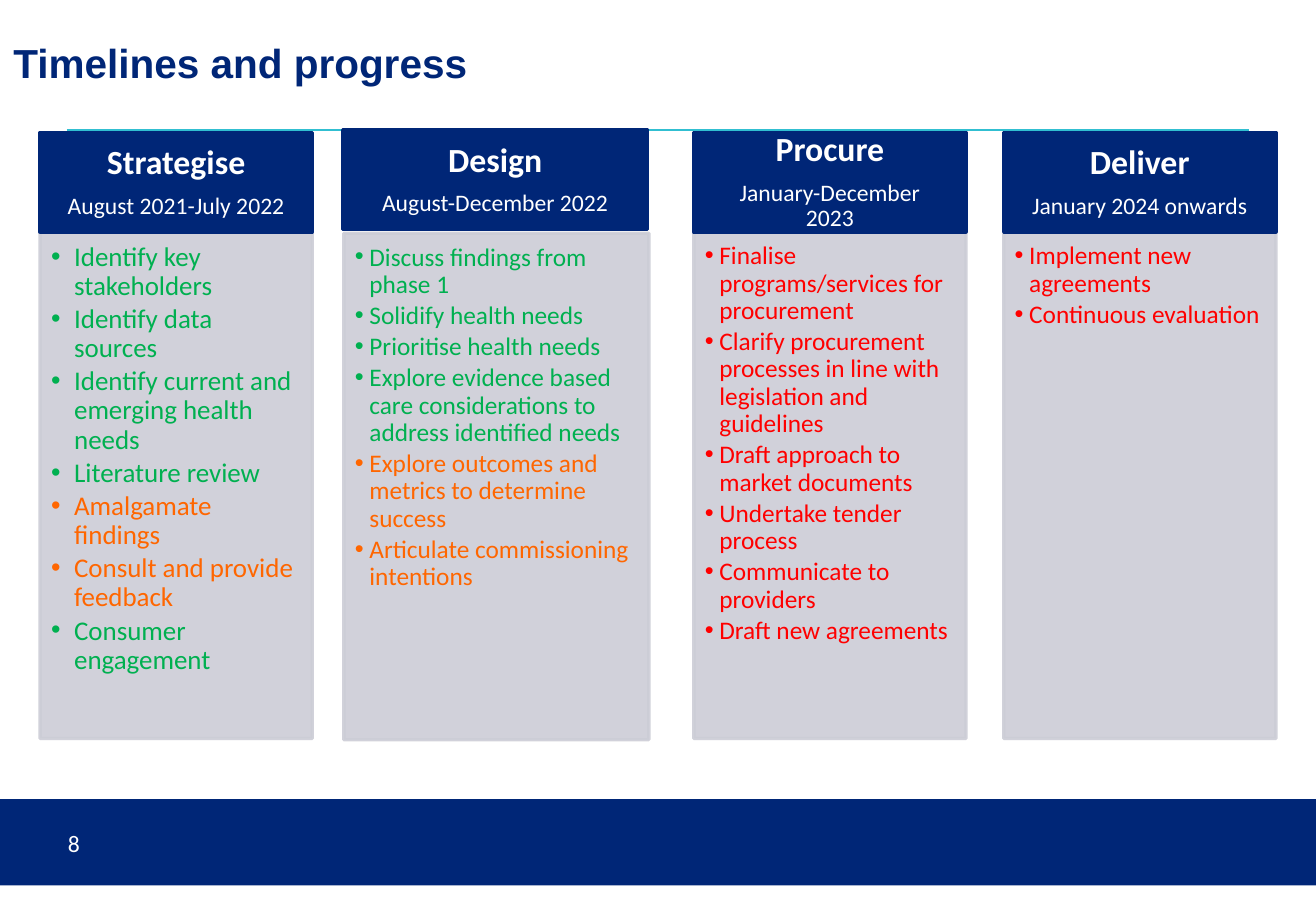
"""Build the timelines and progress slide with its four commissioning phases."""
from dataclasses import dataclass

from lxml.etree import SubElement
from pptx import Presentation
from pptx.dml.color import RGBColor
from pptx.enum.shapes import MSO_CONNECTOR as Connector, MSO_SHAPE as Preset
from pptx.enum.text import MSO_ANCHOR as Anchor, MSO_AUTO_SIZE as AutoSize, PP_ALIGN as Align
from pptx.oxml.ns import qn
from pptx.shapes.base import BaseShape
from pptx.slide import Slide
from pptx.text.text import TextFrame, _Paragraph as Paragraph
from pptx.util import Inches, Pt

NAVY, TEAL, GREY, WHITE = "002677", "31BFD1", "CCCDD6", "FFFFFF"
DONE, UNDERWAY, PLANNED = "00B050", "FF6600", "FF0000"
HEADER_HEIGHT, LIST_HEIGHT = 0.82, 4.17


@dataclass(frozen=True)
class Phase:
    name: str
    dates: str
    tasks: tuple[tuple[str, str], ...]
    left: float
    header_top: float = 1.09
    list_left: float | None = None
    list_top: float = 1.91
    width: float = 2.24
    size: int = 15
    indent: float = 0.12


def tasks(colour: str, *texts: str) -> tuple[tuple[str, str], ...]:
    return tuple((text, colour) for text in texts)


PHASES = (
    Phase("Strategise", "August 2021-July 2022",
          tasks(DONE, "Identify key stakeholders", "Identify data sources",
                "Identify current and emerging health needs", "Literature review")
          + tasks(UNDERWAY, "Amalgamate findings", "Consult and provide feedback")
          + tasks(DONE, "Consumer engagement"),
          left=0.33, size=16, indent=0.19),
    Phase("Design", "August-December 2022",
          tasks(DONE, "Discuss findings from phase 1", "Solidify health needs",
                "Prioritise health needs",
                "Explore evidence based care considerations to address identified needs")
          + tasks(UNDERWAY, "Explore outcomes and metrics to determine success",
                  "Articulate commissioning intentions"),
          left=2.82, header_top=1.07, list_left=2.83, list_top=1.92, width=2.51),
    Phase("Procure", "January-December 2023",
          tasks(PLANNED, "Finalise programs/services for procurement",
                "Clarify procurement processes in line with legislation and guidelines",
                "Draft approach to market documents", "Undertake tender process",
                "Communicate to providers", "Draft new agreements"),
          left=5.71),
    Phase("Deliver", "January 2024 onwards",
          tasks(PLANNED, "Implement new agreements", "Continuous evaluation"),
          left=8.26),
)


def rgb(colour: str) -> RGBColor:
    return RGBColor.from_string(colour)


def place(shape: BaseShape, left: float, top: float, width: float, height: float) -> None:
    shape.left, shape.top = Inches(left), Inches(top)
    shape.width, shape.height = Inches(width), Inches(height)


def paint(shape: BaseShape, colour: str, outlined: bool = True) -> None:
    shape.fill.solid()
    shape.fill.fore_color.rgb = rgb(colour)
    if outlined:
        shape.line.color.rgb = rgb(colour)
        shape.line.width = Pt(2)
    else:
        shape.line.fill.background()


def set_frame(frame: TextFrame, anchor: Anchor,
              insets: tuple[float, float, float, float] = (0.1, 0.05, 0.1, 0.05)) -> None:
    frame.word_wrap = True
    frame.auto_size = AutoSize.NONE
    frame.vertical_anchor = anchor
    frame.margin_left, frame.margin_top, frame.margin_right, frame.margin_bottom = map(Inches, insets)


def next_paragraph(frame: TextFrame, index: int) -> Paragraph:
    return frame.add_paragraph() if index else frame.paragraphs[0]


def add_run(paragraph: Paragraph, text: str, size: int, colour: str,
            bold: bool = False, font: str = "Calibri") -> None:
    run = paragraph.add_run()
    run.text = text
    run.font.name, run.font.size, run.font.bold = font, Pt(size), bold
    run.font.color.rgb = rgb(colour)


def set_spacing(paragraph: Paragraph, after: float) -> None:
    paragraph.line_spacing = 0.9
    paragraph.space_before = Pt(0)
    paragraph.space_after = Pt(after)


def set_bullet(paragraph: Paragraph, indent: float) -> None:
    properties = paragraph._p.get_or_add_pPr()
    properties.set("marL", str(Inches(indent)))
    properties.set("indent", str(-Inches(indent)))
    SubElement(properties, qn("a:buFont")).set("typeface", "Arial")
    SubElement(properties, qn("a:buChar")).set("char", "•")


def add_rectangle(slide: Slide, left: float, top: float, width: float, height: float,
                  outlined: bool = True) -> BaseShape:
    shape = slide.shapes.add_shape(Preset.RECTANGLE, 0, 0, 0, 0)
    place(shape, left, top, width, height)
    shape.shadow.inherit = False
    paint(shape, NAVY, outlined)
    return shape


def add_rule(slide: Slide) -> None:
    rule = slide.shapes.add_connector(Connector.STRAIGHT, Inches(0.55), Inches(1.07),
                                      Inches(10.28), Inches(1.07))
    rule.line.color.rgb = rgb(TEAL)
    rule.line.width = Pt(1)
    SubElement(rule._element.spPr, qn("a:effectLst"))


def add_header(slide: Slide, phase: Phase) -> None:
    header = add_rectangle(slide, phase.left, phase.header_top, phase.width, HEADER_HEIGHT)
    set_frame(header.text_frame, Anchor.MIDDLE, (0.16, 0.09, 0.16, 0.09))
    for index, (text, size, bold) in enumerate(((phase.name, 20, True), (phase.dates, 14, False))):
        paragraph = next_paragraph(header.text_frame, index)
        paragraph.alignment = Align.CENTER
        set_spacing(paragraph, size * 0.35)
        add_run(paragraph, text, size, WHITE, bold)


def fill_list(body: BaseShape, phase: Phase) -> None:
    left = phase.left if phase.list_left is None else phase.list_left
    place(body, left, phase.list_top, phase.width, LIST_HEIGHT)
    paint(body, GREY)
    for colour in body._element.spPr.iter(qn("a:srgbClr")):
        SubElement(colour, qn("a:alpha")).set("val", "90000")
    set_frame(body.text_frame, Anchor.TOP, (0.09, 0.09, 0.12, 0.13))
    for index, (text, colour) in enumerate(phase.tasks):
        paragraph = next_paragraph(body.text_frame, index)
        paragraph.level = 1
        paragraph.alignment = Align.LEFT
        set_bullet(paragraph, phase.indent)
        set_spacing(paragraph, phase.size * 0.15)
        add_run(paragraph, text, phase.size, colour)


def fill_title(title: BaseShape) -> None:
    place(title, 0.01, -0.01, 9.75, 0.77)
    set_frame(title.text_frame, Anchor.BOTTOM)
    paragraph = title.text_frame.paragraphs[0]
    paragraph.alignment = Align.LEFT
    add_run(paragraph, "Timelines and progress", 24, NAVY, True, "Arial")


def add_page_number(slide: Slide) -> None:
    box = slide.shapes.add_textbox(Inches(0.46), Inches(6.74), Inches(3), Inches(0.4))
    set_frame(box.text_frame, Anchor.MIDDLE)
    add_run(box.text_frame.paragraphs[0], "8", 14, WHITE)


def main() -> None:
    presentation = Presentation()
    presentation.slide_width, presentation.slide_height = Inches(10.83), Inches(7.5)
    slide = presentation.slides.add_slide(presentation.slide_layouts.get_by_name("Comparison"))
    title, *bodies = slide.placeholders
    fill_title(title)
    add_rectangle(slide, 0, 6.58, 10.83, 0.71, outlined=False)
    add_rule(slide)
    add_page_number(slide)
    for phase, body in zip(PHASES, bodies):
        fill_list(body, phase)
        add_header(slide, phase)
    presentation.save("out.pptx")


if __name__ == "__main__":
    main()
